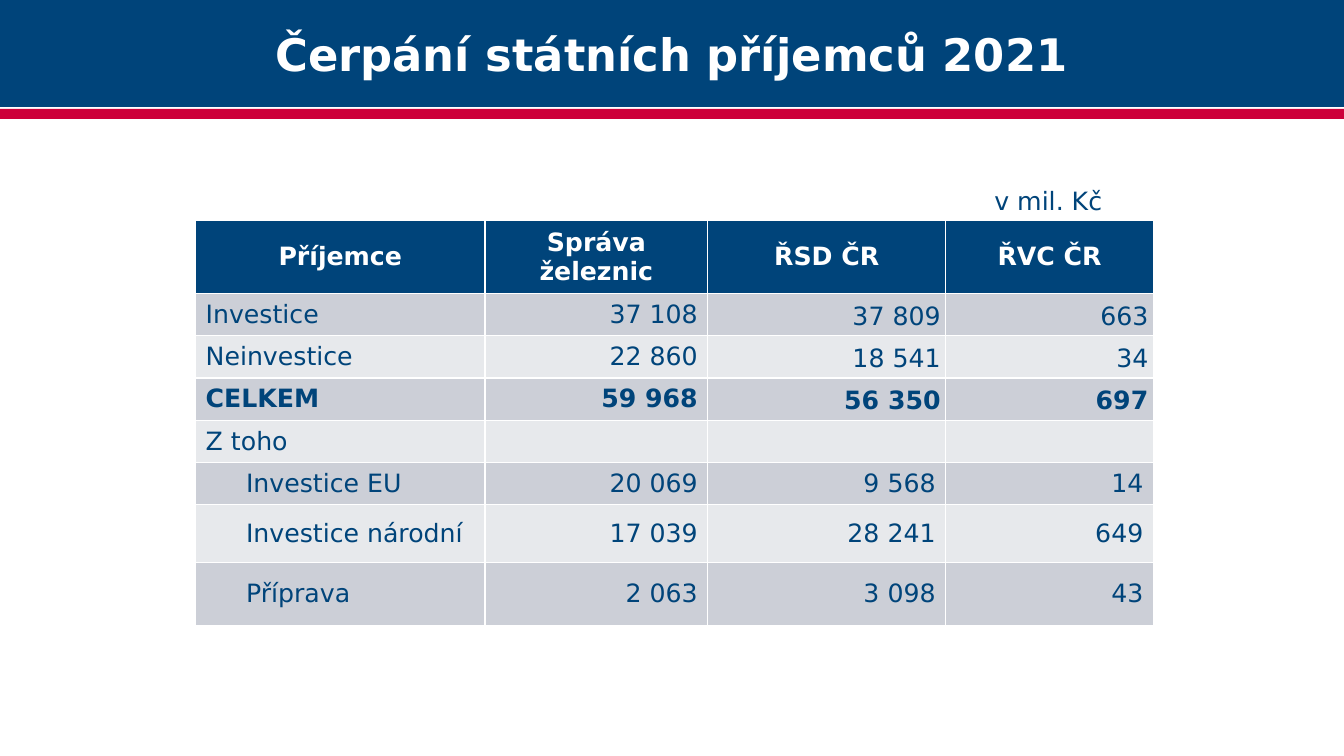
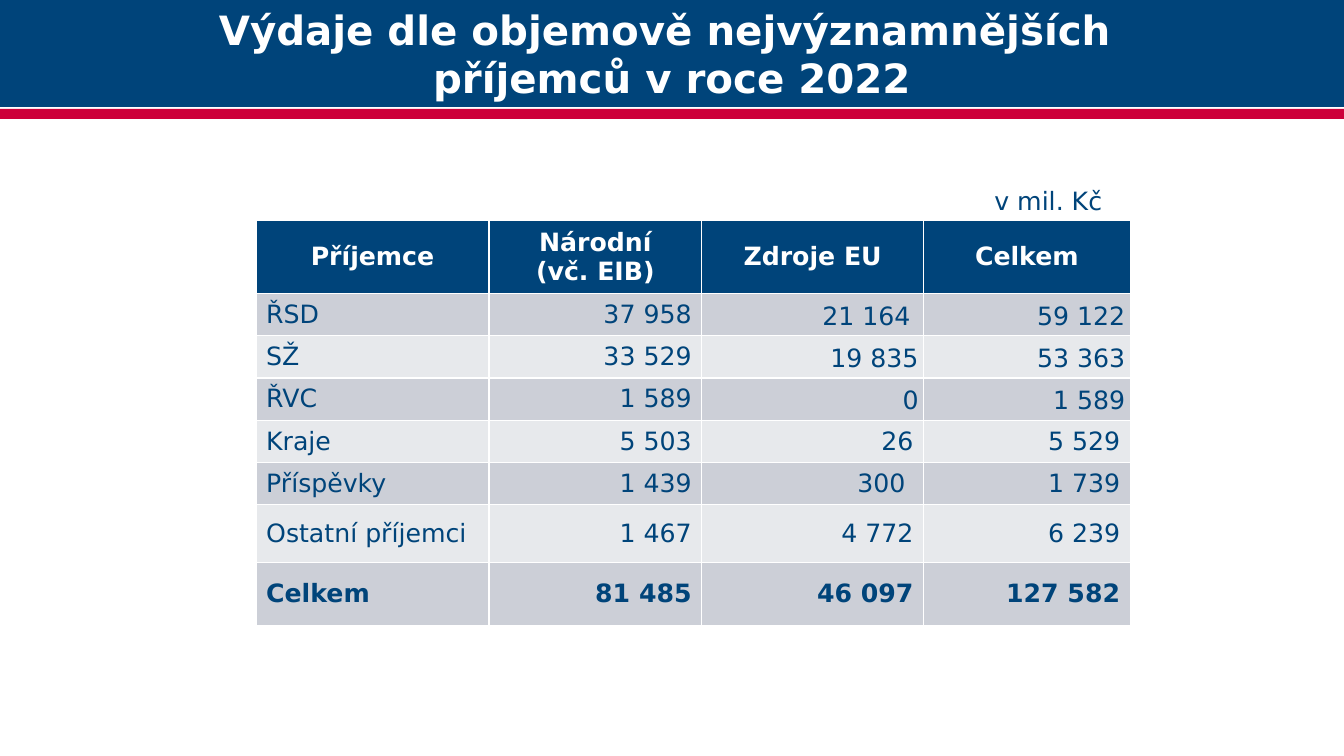
from dataclasses import dataclass

from pptx import Presentation
from pptx.dml.color import RGBColor
from pptx.enum import shapes, text
from pptx import util as u


@dataclass(frozen=True)
class Theme:
    font: str = "DejaVu Sans"
    navy: str = "00447A"
    red: str = "CD003A"
    white: str = "FFFFFF"
    rows: tuple = ("CCCFD7", "E7E9EC")
    body: float = 18


THEME = Theme()
PX = 9144  # 100 px to the inch
ROW_HEIGHTS = [72, 42, 42, 42, 42, 42, 57, 63]
TABLE_TOP = 219
LEFT, CENTER, RIGHT = text.PP_ALIGN.LEFT, text.PP_ALIGN.CENTER, text.PP_ALIGN.RIGHT


def px(*lengths):
    return [u.Emu(length * PX) for length in lengths]


def write(frame, words, size=THEME.body, color=THEME.navy, bold=False, align=LEFT, spacing=None):
    """Fill a text frame; a newline starts a paragraph, a vertical tab breaks a line."""
    for index, line in enumerate(words.split("\n")):
        para = frame.add_paragraph() if index else frame.paragraphs[0]
        para.text = line
        para.alignment = align
        para.line_spacing = spacing
        for span in para.runs:
            span.font.name = THEME.font
            span.font.size = u.Pt(size)
            span.font.bold = bold
            span.font.color.rgb = RGBColor.from_string(color)


# Slide contents
PAGES = [
    dict(
        title="Čerpání státních příjemců 2021",
        title_size=32,
        left=194,
        columns=[287, 221, 236, 206],
        total="CELKEM",
        indented=("Investice EU", "Investice národní", "Příprava"),
        rows=[
            ("Příjemce", "Správa železnic", "ŘSD ČR", "ŘVC ČR"),
            ("Investice", "37 108", "37 809", "663"),
            ("Neinvestice", "22 860", "18 541", "34"),
            ("CELKEM", "59 968", "56 350", "697"),
            ("Z toho", "", "", ""),
            ("Investice EU", "20 069", "9 568", "14"),
            ("Investice národní", "17 039", "28 241", "649"),
            ("Příprava", "2 063", "3 098", "43"),
        ],
    ),
    dict(
        title="Výdaje dle objemově nejvýznamnějších \vpříjemců v roce 2022",
        title_size=28.8,
        left=254,
        columns=[231, 211, 220, 205],
        total="Celkem",
        indented=(),
        rows=[
            ("Příjemce", "Národní\n(vč. EIB)", "Zdroje EU", "Celkem"),
            ("ŘSD", "37 958", "21 164 ", "59 122"),
            ("SŽ", "33 529", "19 835", "53 363"),
            ("ŘVC", "1 589", "0", "1 589"),
            ("Kraje", "5 503", "26", "5 529"),
            ("Příspěvky", "1 439", "300 ", "1 739"),
            ("Ostatní příjemci", "1 467", "4 772", "6 239"),
            ("Celkem", "81 485", "46 097", "127 582"),
        ],
    ),
]

deck = Presentation()
deck.slide_width, deck.slide_height = px(1333, 750)
layout = deck.slide_layouts.get_by_name("Title Only")

for content in PAGES:
    page = deck.slides.add_slide(layout)

    # Title bar
    title = page.shapes.title
    title.left, title.top, title.width, title.height = px(0, 0, 1333, 106)
    title.fill.solid()
    title.fill.fore_color.rgb = RGBColor.from_string(THEME.navy)
    title.text_frame.auto_size = text.MSO_AUTO_SIZE.NONE
    title.text_frame.vertical_anchor = text.MSO_ANCHOR.MIDDLE
    write(title.text_frame, content["title"], size=content["title_size"],
          color=THEME.white, bold=True, align=CENTER)

    # Red band under the title
    band = page.shapes.add_shape(shapes.MSO_SHAPE.RECTANGLE, *px(0, 108, 1333, 10))
    band.shadow.inherit = False
    band.fill.solid()
    band.fill.fore_color.rgb = RGBColor.from_string(THEME.red)
    band.line.fill.background()

    # Table; the default style supplies the white rules
    columns, rows = content["columns"], content["rows"]
    table = page.shapes.add_table(
        len(rows), len(columns),
        *px(content["left"], TABLE_TOP, sum(columns), sum(ROW_HEIGHTS))).table
    for column, width in zip(table.columns, px(*columns)):
        column.width = width
    for row, height in zip(table.rows, px(*ROW_HEIGHTS)):
        row.height = height

    for r, values in enumerate(rows):
        label = values[0]
        for c, value in enumerate(values):
            cell = table.cell(r, c)
            cell.vertical_anchor = text.MSO_ANCHOR.MIDDLE
            cell.fill.solid()
            fill = THEME.rows[(r - 1) % 2] if r else THEME.navy
            cell.fill.fore_color.rgb = RGBColor.from_string(fill)
            tight = 1 <= r <= 3 and c >= 2
            if tight:
                cell.margin_left, cell.margin_top, cell.margin_right, cell.margin_bottom = px(5, 0, 5, 0)
            elif c == 0 and label in content["indented"]:
                cell.margin_left = px(50)[0]
            if r == 0:
                write(cell.text_frame, value, color=THEME.white, bold=True, align=CENTER)
            else:
                write(cell.text_frame, value, bold=label == content["total"],
                      align=RIGHT if c else LEFT, spacing=1.15 if tight else None)

    # Unit note
    note = page.shapes.add_textbox(*px(965, 179, 138, 40))
    note.text_frame.word_wrap = True
    note.text_frame.auto_size = text.MSO_AUTO_SIZE.SHAPE_TO_FIT_TEXT
    write(note.text_frame, "v mil. Kč", align=RIGHT)

deck.save("out.pptx")
